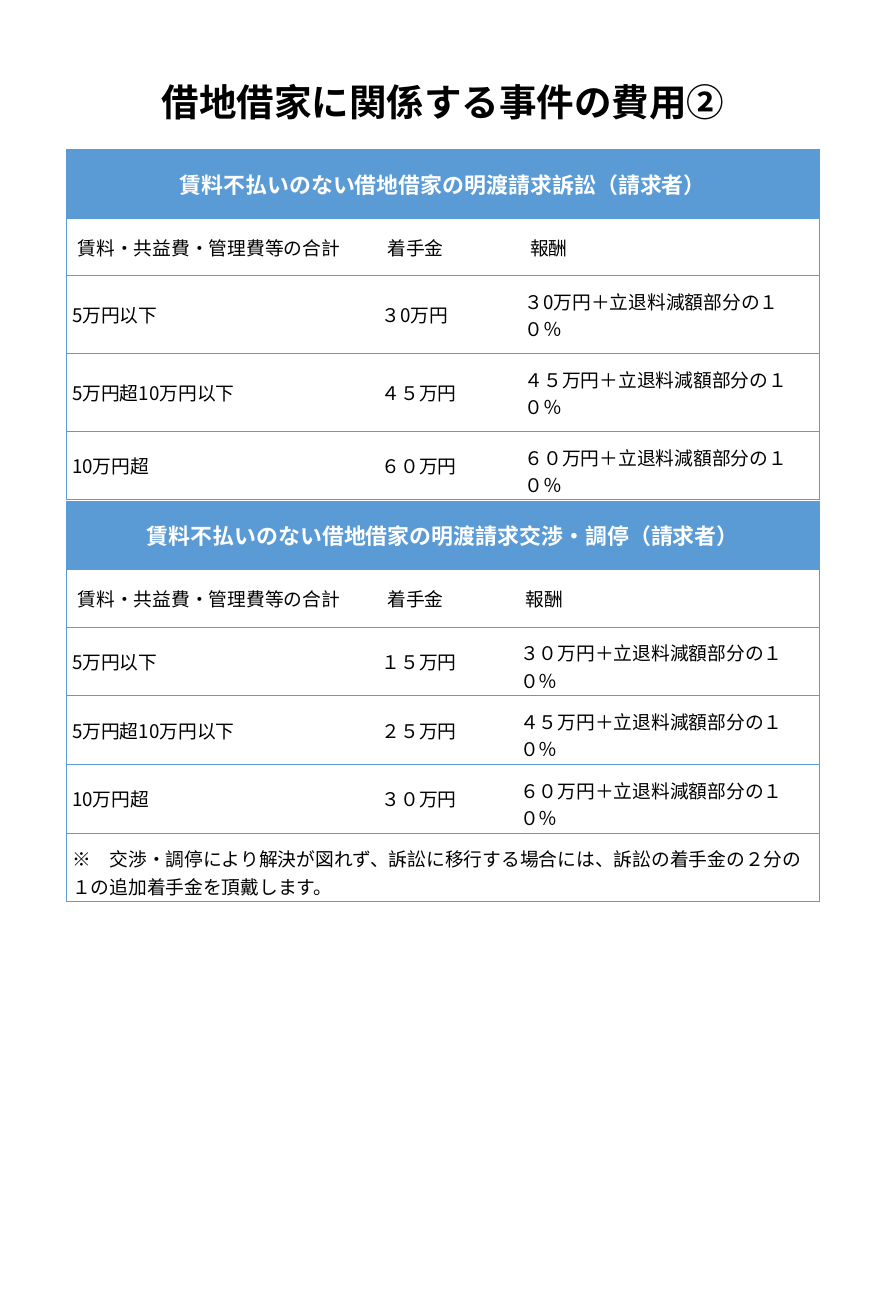
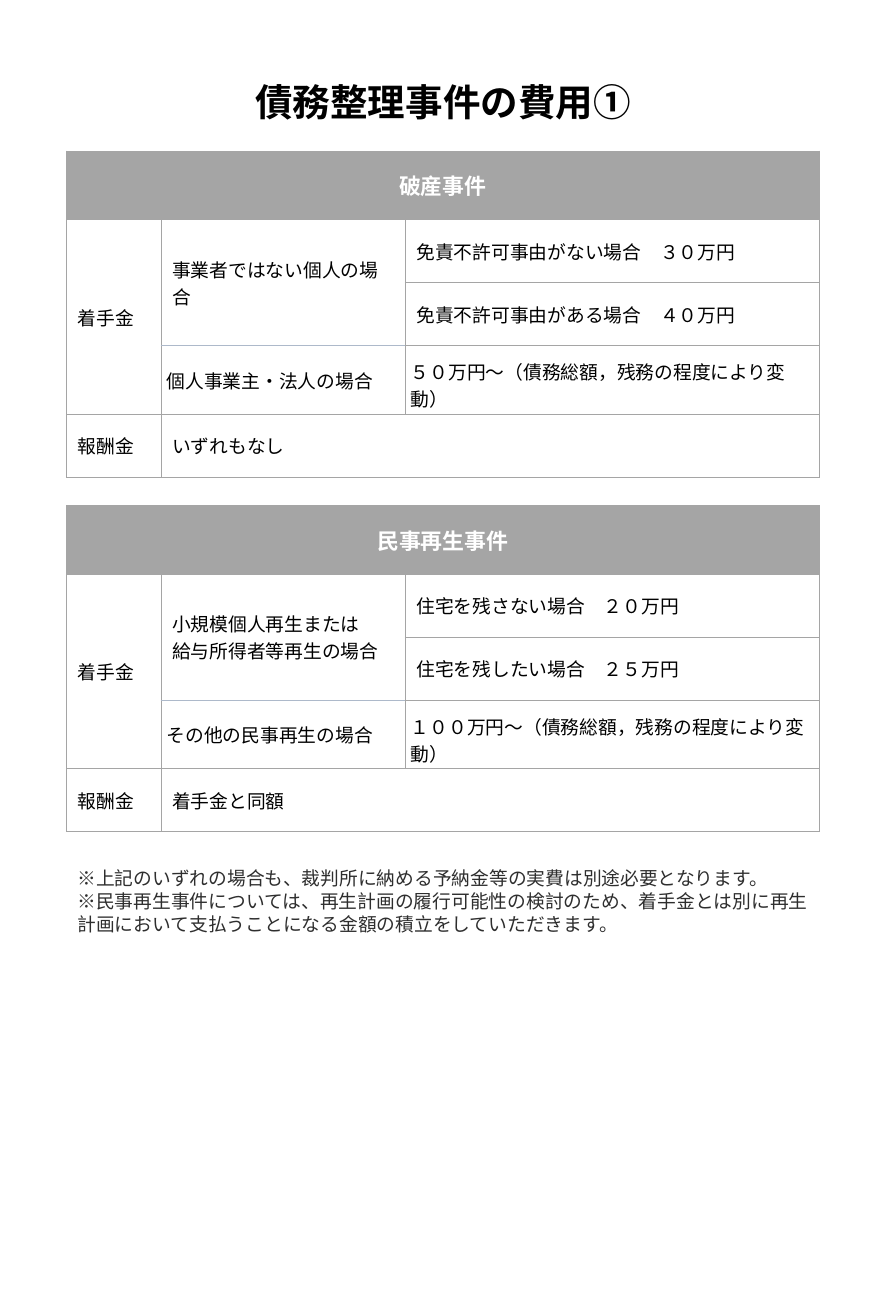
from dataclasses import dataclass, field

from lxml import etree
from pptx import Presentation
from pptx.dml.color import RGBColor
from pptx.enum import text
from pptx.oxml import ns
from pptx.util import Inches, Pt

FONT = "Noto Sans CJK JP"
COLORS = {"blue": "5B9BD5", "gray": "A5A5A5", "pale": "ADB9CA",
          "white": "FFFFFF", "black": "000000", "note": "2E2E2E"}
FORMATS = {
    "title": {"size": Pt(24), "bold": True, "color": "black"},
    "head": {"size": Pt(14), "bold": True, "color": "white"},
    "body": {"size": Pt(12), "bold": False, "color": "black"},
    "note": {"size": Pt(12), "bold": False, "color": "note"},
}
# Cell margins in inches: side, top, bottom
MARGINS = {"wide": (0.1, 0.05, 0.05), "tight": (0.05, 0.05, 0.05),
           "wrap": (0.05, 0.1, 0.01), "loose": (0.05, 0.1, 0.09)}
LEFT, WIDTH = 0.59, 6.69
HEAD_H, LABEL_H, GRID_H, WRAP_H, LOOSE_H = 0.61, 0.51, 0.56, 0.61, 0.69


@dataclass
class Cell:
    text: str
    margin: str = "wide"
    span: tuple = (1, 1)
    style: str = "body"
    edges: dict = field(default_factory=dict)


def write(tf, content, style, align=text.PP_ALIGN.LEFT, spacing=None):
    tf.text = content
    fmt = dict(FORMATS[style])
    color = RGBColor.from_string(COLORS[fmt.pop("color")])
    for p in tf.paragraphs:
        p.alignment = align
        p.line_spacing = spacing
        for r in p.runs:
            r.font.color.rgb = color
            r.font.name = FONT
            for name, value in fmt.items():
                setattr(r.font, name, value)
            latin = r.font._element.find(ns.qn("a:latin"))
            ea = etree.Element(ns.qn("a:ea"), typeface=FONT)
            latin.addnext(ea)


def draw_edges(cell, edges):
    """Set cell borders; a colour of None hides the line."""
    tc_pr = cell._tc.get_or_add_tcPr()
    for i, side in enumerate("LRTB"):
        ln = etree.Element(ns.qn(f"a:ln{side}"), w=str(Pt(0.5)))
        color = edges[side]
        if color:
            fill = etree.SubElement(ln, ns.qn("a:solidFill"))
            etree.SubElement(fill, ns.qn("a:srgbClr"), val=COLORS[color])
        else:
            etree.SubElement(ln, ns.qn("a:noFill"))
        tc_pr.insert(i, ln)


def fill_cell(cell, spec, color):
    is_head = spec.style == "head"
    align = text.PP_ALIGN.CENTER if is_head else text.PP_ALIGN.LEFT
    write(cell.text_frame, spec.text, spec.style, align)
    side, top, bottom = MARGINS[spec.margin]
    margins = {"left": side, "right": side, "top": top, "bottom": bottom}
    for name, value in margins.items():
        setattr(cell, f"margin_{name}", Inches(value))
    cell.vertical_anchor = text.MSO_ANCHOR.MIDDLE
    if is_head:
        cell.fill.solid()
        cell.fill.fore_color.rgb = RGBColor.from_string(COLORS[color])
    else:
        cell.fill.background()


def add_fee_table(slide, top, cols, heights, rows, color, verticals):
    """Place a ruled table; rows hold Cells, or None where a span covers."""
    frame = slide.shapes.add_table(len(rows), len(cols), Inches(LEFT), Inches(top),
                                   Inches(WIDTH), Inches(sum(heights)))
    table = frame.table
    table.first_row = table.horz_banding = False
    for col, width in zip(table.columns, cols):
        col.width = Inches(width)
    for row, height in zip(table.rows, heights):
        row.height = Inches(height)
    for i, row in enumerate(rows):
        for j, spec in enumerate(row):
            if spec is None:
                continue
            cell = table.cell(i, j)
            down, across = spec.span
            if spec.span != (1, 1):
                cell.merge(table.cell(i + down - 1, j + across - 1))
            fill_cell(cell, spec, color)
            inner = color if verticals else None
            edges = {"L": color if j == 0 else inner,
                     "R": color if j + across == len(cols) else inner,
                     "T": color, "B": color}
            for r in range(i, i + down):
                for c in range(j, j + across):
                    draw_edges(table.cell(r, c), {**edges, **spec.edges})


def banner(content):
    return [Cell(content, span=(1, 3), style="head"), None, None]


def add_eviction_table(slide, top, heading, cols, fees, wrap, heights, remark=None):
    """Fees by monthly rent; wrap gives the margin of each last cell."""
    bands = ["5万円以下", "5万円超10万円以下", "10万円超"]
    rows = [banner(heading),
            [Cell("賃料・共益費・管理費等の合計"), Cell("着手金"), Cell("報酬")]]
    for band, (retainer, reward), margin in zip(bands, fees, wrap):
        rows.append([Cell(band, "tight"), Cell(retainer, "tight"),
                     Cell(reward + "＋立退料減額部分の１０％", margin)])
    if remark:
        rows.append([Cell(remark, "wrap", (1, 3)), None, None])
    add_fee_table(slide, top, cols, [HEAD_H, LABEL_H] + heights, rows, "blue", False)


def add_debt_table(slide, top, heading, main_case, options, other_case, other_fee, reward):
    rows = [
        banner(heading),
        [Cell("着手金", span=(3, 1)),
         Cell(main_case, span=(2, 1), edges={"B": "pale"}), Cell(options[0])],
        [None, None, Cell(options[1])],
        [None, Cell(other_case, "tight", edges={"T": "pale"}),
         Cell(other_fee + "～（債務総額，残務の程度により変動）", "wrap")],
        [Cell("報酬金"), Cell(reward, span=(1, 2)), None],
    ]
    heights = [HEAD_H, GRID_H, GRID_H, WRAP_H, GRID_H]
    add_fee_table(slide, top, [0.84, 2.17, 3.68], heights, rows, "gray", True)


def add_notes(slide, top, lines):
    box = slide.shapes.add_textbox(Inches(LEFT), Inches(top), Inches(WIDTH), Inches(0.71))
    box.text_frame.word_wrap = True
    write(box.text_frame, "\n".join(lines), "note", spacing=Pt(14.5))


def new_slide(prs, title):
    slide = prs.slides.add_slide(prs.slide_layouts[5])
    sp = slide.shapes.title
    box = {"left": LEFT, "top": 0.65, "width": WIDTH, "height": 0.5}
    for name, value in box.items():
        setattr(sp, name, Inches(value))
    tf = sp.text_frame
    tf.word_wrap = True
    tf.auto_size = text.MSO_AUTO_SIZE.NONE
    tf.vertical_anchor = text.MSO_ANCHOR.MIDDLE
    write(tf, title, "title", text.PP_ALIGN.CENTER)
    return slide


def build_eviction_slide(prs):
    slide = new_slide(prs, "借地借家に関係する事件の費用②")
    add_eviction_table(
        slide, 1.33, "賃料不払いのない借地借家の明渡請求訴訟（請求者）", [2.75, 1.27, 2.67],
        [("３0万円", "３0万円"), ("４５万円", "４５万円"), ("６０万円", "６０万円")],
        ["loose", "loose", "wrap"], [LOOSE_H, LOOSE_H, WRAP_H])
    add_eviction_table(
        slide, 4.45, "賃料不払いのない借地借家の明渡請求交渉・調停（請求者）", [2.75, 1.23, 2.71],
        [("１５万円", "３０万円"), ("２５万円", "４５万円"), ("３０万円", "６０万円")],
        ["wrap"] * 3, [WRAP_H] * 4,
        "※　交渉・調停により解決が図れず、訴訟に移行する場合には、訴訟の着手金の２分の１の追加着手金を頂戴します。")


def build_debt_slide(prs):
    slide = new_slide(prs, "債務整理事件の費用①")
    add_debt_table(
        slide, 1.34, "破産事件", "事業者ではない個人の場合",
        ["免責不許可事由がない場合　３０万円", "免責不許可事由がある場合　４０万円"],
        "個人事業主・法人の場合", "５０万円", "いずれもなし")
    add_debt_table(
        slide, 4.49, "民事再生事件", "小規模個人再生または\n給与所得者等再生の場合",
        ["住宅を残さない場合　２０万円", "住宅を残したい場合　２５万円"],
        "その他の民事再生の場合", "１００万円", "着手金と同額")
    add_notes(slide, 7.65, [
        "※上記のいずれの場合も、裁判所に納める予納金等の実費は別途必要となります。",
        "※民事再生事件については、再生計画の履行可能性の検討のため、着手金とは別に"
        "再生計画において支払うことになる金額の積立をしていただきます。"])


def main():
    prs = Presentation()
    prs.slide_width, prs.slide_height = Inches(7.87), Inches(11.69)
    build_eviction_slide(prs)
    build_debt_slide(prs)
    prs.save("out.pptx")


if __name__ == "__main__":
    main()
